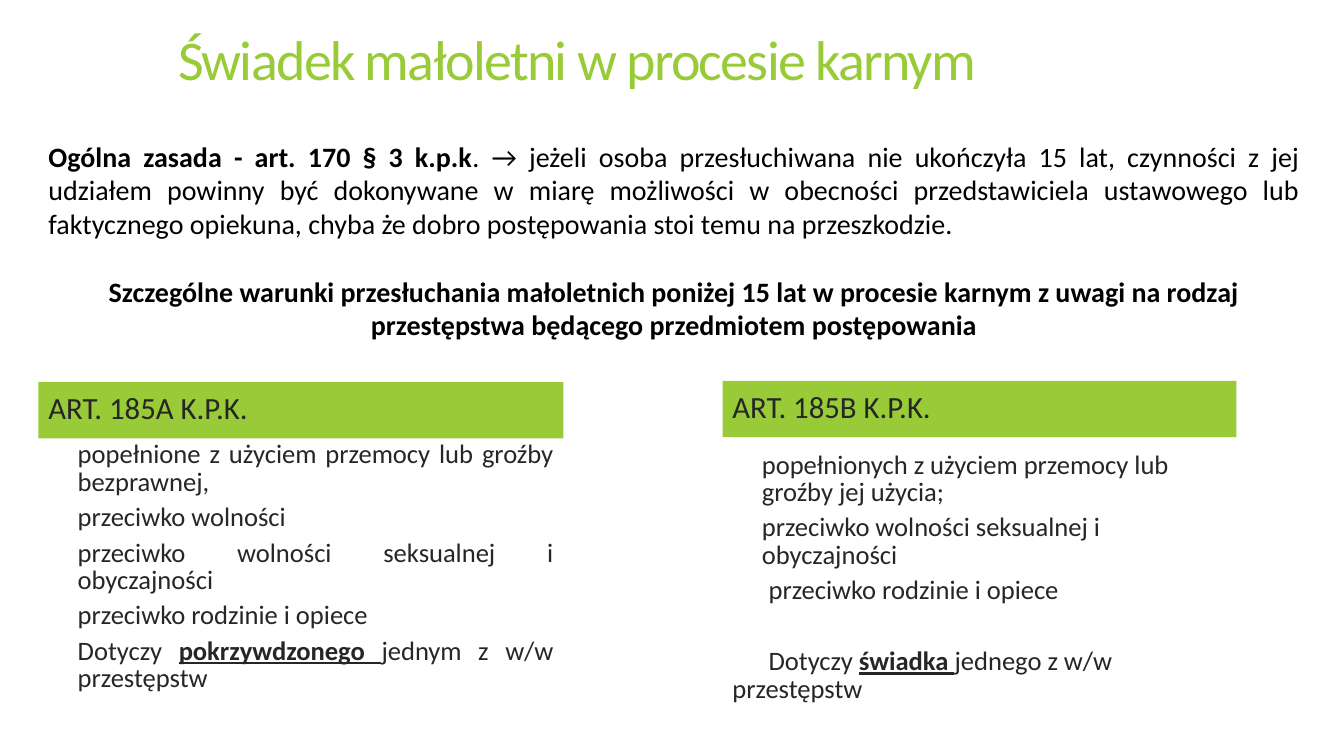
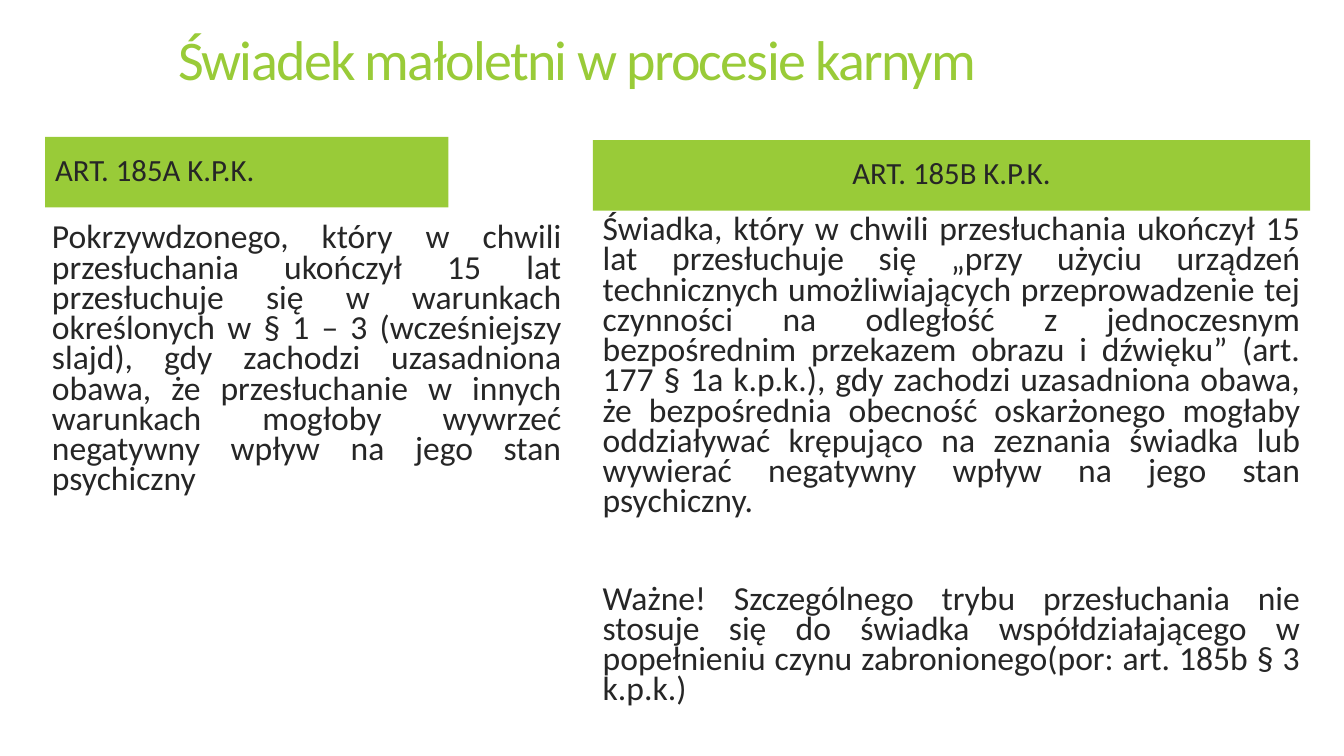
from pptx import Presentation
from pptx.dml.color import RGBColor
from pptx.enum.shapes import MSO_SHAPE
from pptx.enum.text import MSO_ANCHOR, PP_ALIGN
from pptx.util import Cm, Pt

GREEN = RGBColor(0x99, 0xCB, 0x38)
DARK = RGBColor(0x26, 0x26, 0x26)
BLACK = RGBColor(0, 0, 0)
FONT = "Calibri"
LEFT, CENTER, JUSTIFY = PP_ALIGN.LEFT, PP_ALIGN.CENTER, PP_ALIGN.JUSTIFY

TITLE = "Świadek małoletni w procesie karnym"
TITLE_BOX = (4.24, 0, 23.7, 3.18)

# A paragraph is a list of (text, style) runs; style "b" is bold, "u" underlined.
INTRO_BOX = (0.97, 3.38, 32.03, 5.4)
RULE = [
    ("Ogólna zasada - art. 170 § 3 k.p.k", "b"),
    (". → jeżeli osoba przesłuchiwana nie ukończyła 15 lat, czynności z jej udziałem "
     "powinny być dokonywane w miarę możliwości w obecności przedstawiciela ustawowego "
     "lub faktycznego opiekuna, chyba że dobro postępowania stoi temu na przeszkodzie.", ""),
]
CONDITIONS = [
    ("Szczególne warunki przesłuchania małoletnich poniżej 15 lat w procesie karnym "
     "z uwagi na rodzaj przestępstwa będącego przedmiotem postępowania", "b"),
]
INTRO = [(RULE, dict(align=JUSTIFY)), (CONDITIONS, dict(align=CENTER, before=24.4))]

HANGING = dict(margin=0.74)
FIRST_LINE = dict(first=0.91)

SLIDES = [
    dict(
        intro=INTRO,
        body=dict(size=19, spacing=0.85, before=6),
        columns=[
            dict(
                band="ART. 185A K.P.K.", band_box=(0.97, 9.63, 13.23, 1.42),
                box=(0.97, 11.02, 13.23, 7.6), align=JUSTIFY,
                paragraphs=[
                    ([("popełnione z użyciem przemocy lub groźby bezprawnej,", "")], HANGING),
                    ([("przeciwko wolności", "")], HANGING),
                    ([("przeciwko wolności seksualnej i obyczajności", "")], HANGING),
                    ([("przeciwko rodzinie i opiece", "")], HANGING),
                    ([("Dotyczy ", ""), ("pokrzywdzonego ", "bu"),
                      ("jednym z w/w przestępstw", "")], HANGING),
                ],
            ),
            dict(
                band="ART. 185B K.P.K.", band_box=(18.21, 9.6, 12.95, 1.42),
                box=(18.21, 11.28, 12.95, 7.3),
                paragraphs=[
                    ([("popełnionych z użyciem przemocy lub groźby jej użycia;", "")], HANGING),
                    ([("przeciwko wolności seksualnej i obyczajności", "")], HANGING),
                    ([("przeciwko rodzinie i opiece", "")], FIRST_LINE),
                    ([("Dotyczy ", ""), ("świadka ", "bu"),
                      ("jednego z w/w przestępstw", "")], dict(FIRST_LINE, before=31.7)),
                ],
            ),
        ],
    ),
    dict(
        body=dict(size=24, spacing=0.75, before=13, align=JUSTIFY),
        columns=[
            dict(
                band="ART. 185A K.P.K.", band_box=(1.14, 3.45, 10.16, 1.78),
                box=(0.81, 5.54, 13.59, 10.97),
                paragraphs=[
                    ([("Pokrzywdzonego, który w chwili przesłuchania ukończył 15 lat "
                       "przesłuchuje się w warunkach określonych w § 1 – 3 (wcześniejszy "
                       "slajd), gdy zachodzi uzasadniona obawa, że przesłuchanie w innych "
                       "warunkach mogłoby wywrzeć negatywny wpływ na jego stan psychiczny",
                       "")], dict(margin=0.25)),
                ],
            ),
            dict(
                band="ART. 185B K.P.K.", band_box=(14.94, 3.53, 18.08, 1.78),
                band_align=CENTER, box=(14.94, 5.33, 18.08, 13),
                paragraphs=[
                    ([("Świadka, który w chwili przesłuchania ukończył 15 lat przesłuchuje "
                       "się „przy użyciu urządzeń technicznych umożliwiających "
                       "przeprowadzenie tej czynności na odległość z jednoczesnym "
                       "bezpośrednim przekazem obrazu i dźwięku” (art. 177 § 1a k.p.k.), "
                       "gdy zachodzi uzasadniona obawa, że bezpośrednia obecność oskarżonego "
                       "mogłaby oddziaływać krępująco na zeznania świadka lub wywierać "
                       "negatywny wpływ na jego stan psychiczny.", "")], {}),
                    ([("Ważne! Szczególnego trybu przesłuchania nie stosuje się do świadka "
                       "współdziałającego w popełnieniu czynu zabronionego(por: art. 185b "
                       "§ 3 k.p.k.)", "")], dict(before=48)),
                ],
            ),
        ],
    ),
]


def add_paragraph(p, runs, size=20, color=DARK, align=LEFT, spacing=1.0, before=0,
                  margin=0, first=0, tracking=0):
    """Fill p with styled runs; margin and first-line indent are in centimetres."""
    p.alignment, p.line_spacing, p.space_before = align, spacing, Pt(before)
    pPr = p._p.get_or_add_pPr()
    pPr.set("marL", str(Cm(margin)))
    pPr.set("indent", str(Cm(first)))
    for text, style in runs:
        r = p.add_run()
        r.text = text
        r.font.name, r.font.size = FONT, Pt(size)
        r.font.color.rgb = color
        r.font.bold, r.font.underline = "b" in style, "u" in style
        if tracking:
            r._r.get_or_add_rPr().set("spc", str(tracking))


def add_text(slide, box, paragraphs, fill=None, anchor=MSO_ANCHOR.TOP, **fmt):
    """Add a text box, or a filled rectangle, whose paragraphs may override fmt."""
    lengths = [Cm(v) for v in box]
    if fill is None:
        sp = slide.shapes.add_textbox(*lengths)
    else:
        sp = slide.shapes.add_shape(MSO_SHAPE.RECTANGLE, *lengths)
        sp.shadow.inherit = False
        sp.fill.solid()
        sp.fill.fore_color.rgb = fill
        sp.line.fill.background()
    tf = sp.text_frame
    tf.word_wrap = True
    tf.vertical_anchor = anchor
    for i, (runs, own) in enumerate(paragraphs):
        p = tf.add_paragraph() if i else tf.paragraphs[0]
        add_paragraph(p, runs, **{**fmt, **own})


def add_line(slide, box, text, **fmt):
    add_text(slide, box, [([(text, "")], {})], anchor=MSO_ANCHOR.MIDDLE,
             spacing=0.85, **fmt)


def add_column(slide, column, body):
    add_line(slide, column["band_box"], column["band"], fill=GREEN, size=22,
             align=column.get("band_align", LEFT), before=13)
    fmt = dict(body)
    if "align" in column:
        fmt["align"] = column["align"]
    add_text(slide, column["box"], column["paragraphs"], **fmt)


def main():
    prs = Presentation()
    prs.slide_width, prs.slide_height = Cm(33.87), Cm(19.05)
    for content in SLIDES:
        s = prs.slides.add_slide(prs.slide_layouts[6])
        add_line(s, TITLE_BOX, TITLE, size=40, color=GREEN, tracking=-120)
        if "intro" in content:
            add_text(s, INTRO_BOX, content["intro"], color=BLACK)
        for column in content["columns"]:
            add_column(s, column, content["body"])
    prs.save("out.pptx")


if __name__ == "__main__":
    main()
